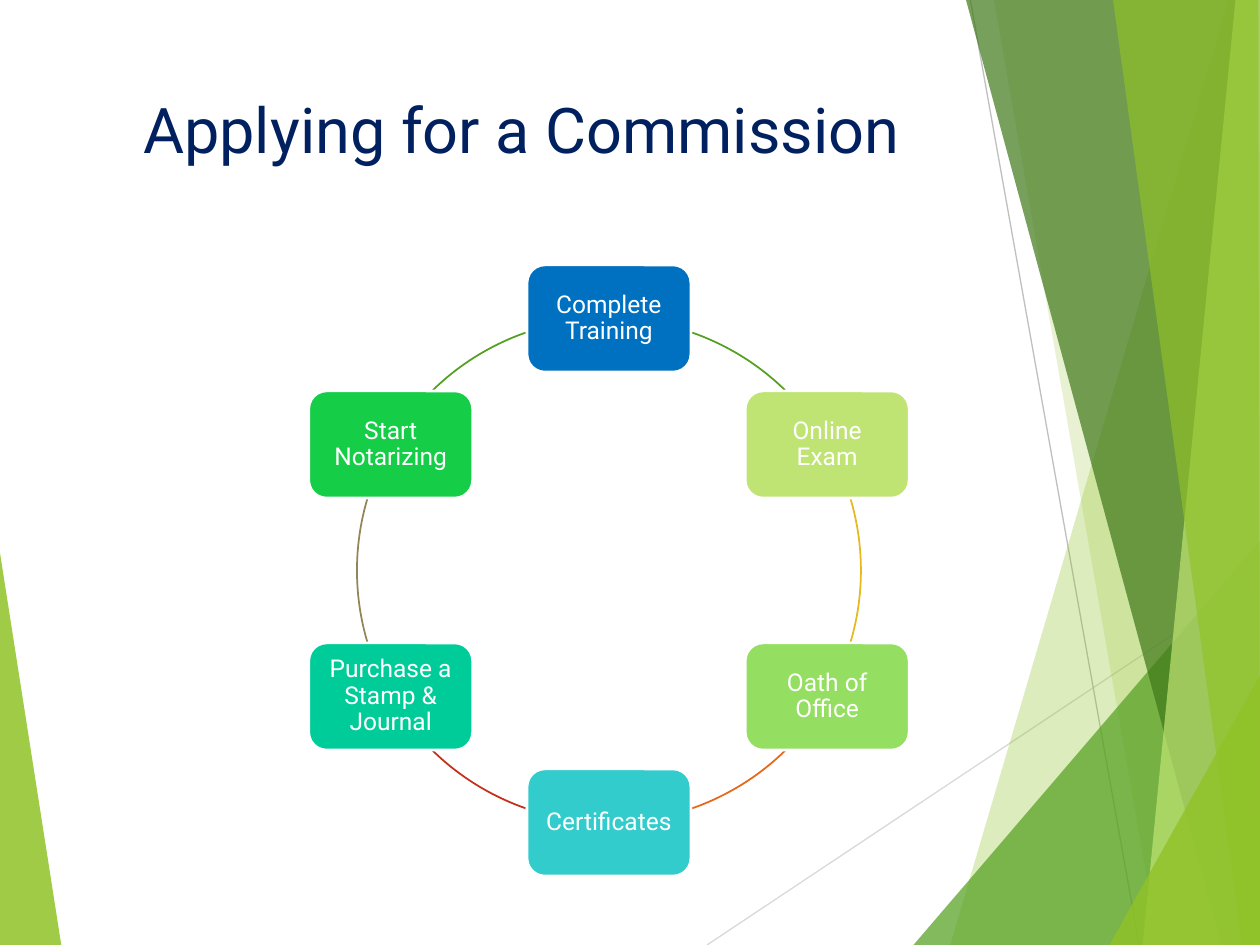
from math import cos, radians, sin

from lxml.etree import SubElement
from pptx import Presentation
from pptx.dml.color import RGBColor
from pptx.enum.shapes import MSO_CONNECTOR, MSO_SHAPE
from pptx.enum.text import MSO_ANCHOR, MSO_AUTO_SIZE, PP_ALIGN
from pptx.oxml.ns import qn
from pptx.util import Pt

WIDTH, HEIGHT = 720, 540
CENTER_X, CENTER_Y, RADIUS = 348, 326, 144
BOX_WIDTH, BOX_HEIGHT = 93.6, 61.2

STEPS = [
    ("Complete Training", "0070C0"),
    ("Online Exam", "C0E474"),
    ("Oath of Office", "94DE61"),
    ("Certificates", "33CCCC"),
    ("Purchase a Stamp & Journal", "00CC99"),
    ("Start Notarizing", "15CD46"),
]

# Start and end angle, clockwise from three o'clock, and colour
ARCS = [
    (289.3, 314.5, "54A021"),
    (343.5, 16.5, "E6B91E"),
    (45.5, 70.7, "E76618"),
    (109.3, 134.5, "C42F1A"),
    (163.5, 196.5, "918655"),
    (225.5, 250.7, "54A021"),
]

LEFT_FACET = ([(0, 316), (35.3, 540), (0, 540)], "90C226", 85)
RAYS = [
    ((404, 540), (720, 329.5), "D9D9D9"),
    ((554.5, 0), (651, 540), "BFBFBF"),
]
# Corner points, colour and opacity in percent, from back to front
RIGHT_FACETS = [
    ([(702, 0), (543, 540), (720, 540), (720, 0)], "90C226", 30),
    ([(567.5, 0), (661.5, 540), (720, 540), (720, 0)], "90C226", 20),
    ([(522.5, 540), (720, 309), (720, 540)], "54A021", 72),
    ([(552, 0), (698, 540), (720, 540), (720, 0)], "3F7819", 70),
    ([(706.5, 0), (653, 540), (720, 540), (720, 0)], "C0E474", 70),
    ([(636, 0), (710, 540), (720, 540), (718.8, 0)], "90C226", 65),
    ([(634.5, 540), (720, 385.5), (720, 540)], "90C226", 80),
]


def color(hex_string):
    return RGBColor.from_string(hex_string)


class SlideBuilder:
    font = "Roboto"

    def __init__(self, page):
        self.page = page
        self.shapes = page.shapes

    def style_text(self, frame, text, size, text_color):
        frame.text = text
        frame.word_wrap = True
        frame.auto_size = MSO_AUTO_SIZE.NONE
        para = frame.paragraphs[0]
        para.alignment = PP_ALIGN.CENTER
        para.font.name = self.font
        para.font.size = Pt(size)
        para.font.color.rgb = color(text_color)
        return para

    def title(self, text, left, top, width, height):
        title = self.shapes.title
        title.left, title.top = Pt(left), Pt(top)
        title.width, title.height = Pt(width), Pt(height)
        self.style_text(title.text_frame, text, 36, "002060")
        title.text_frame.vertical_anchor = MSO_ANCHOR.TOP

    def facet(self, points, fill, opacity):
        """Draw a translucent polygon."""
        builder = self.shapes.build_freeform(*points[0], scale=Pt(1))
        builder.add_line_segments(points[1:], close=True)
        facet = builder.convert_to_shape()
        facet.shadow.inherit = False
        facet.fill.solid()
        facet.fill.fore_color.rgb = color(fill)
        facet.line.fill.background()
        fill_color = facet.fill._xPr.find(qn("a:solidFill"))[0]
        SubElement(fill_color, qn("a:alpha")).set("val", str(opacity * 1000))

    def line(self, start, end, line_color):
        line = self.shapes.add_connector(
            MSO_CONNECTOR.STRAIGHT, *map(Pt, start + end))
        line.line.color.rgb = color(line_color)
        line.line.width = Pt(0.75)
        SubElement(line._element.spPr, qn("a:effectLst"))

    def arc(self, start, end, line_color):
        """Draw part of the cycle's circle between two angles in degrees."""
        arc = self.shapes.add_shape(
            MSO_SHAPE.ARC, Pt(CENTER_X - RADIUS), Pt(CENTER_Y - RADIUS),
            Pt(2 * RADIUS), Pt(2 * RADIUS))
        arc.shadow.inherit = False
        # Angles are stored in 1/60000 degree, adjustments scale by 100000
        arc.adjustments[0] = start * 0.6
        arc.adjustments[1] = end * 0.6
        arc.fill.background()
        arc.line.color.rgb = color(line_color)
        arc.line.width = Pt(1)

    def step(self, text, fill, angle):
        """Place a step box on the circle at an angle in degrees."""
        x = CENTER_X + RADIUS * cos(radians(angle))
        y = CENTER_Y + RADIUS * sin(radians(angle))
        box = self.shapes.add_shape(
            MSO_SHAPE.ROUNDED_RECTANGLE,
            Pt(x - BOX_WIDTH / 2), Pt(y - BOX_HEIGHT / 2),
            Pt(BOX_WIDTH), Pt(BOX_HEIGHT))
        box.shadow.inherit = False
        box.fill.solid()
        box.fill.fore_color.rgb = color(fill)
        box.line.color.rgb = color("FFFFFF")
        box.line.width = Pt(1.5)
        frame = box.text_frame
        frame.margin_left = frame.margin_right = Pt(7)
        frame.margin_top = frame.margin_bottom = Pt(7)
        frame.vertical_anchor = MSO_ANCHOR.MIDDLE
        para = self.style_text(frame, text, 14, "FFFFFF")
        para.line_spacing = 0.9


def main():
    deck = Presentation()
    deck.slide_width, deck.slide_height = Pt(WIDTH), Pt(HEIGHT)
    builder = SlideBuilder(deck.slides.add_slide(deck.slide_layouts[5]))

    builder.facet(*LEFT_FACET)
    for ray in RAYS:
        builder.line(*ray)
    for facet in RIGHT_FACETS:
        builder.facet(*facet)

    builder.title("Applying for a Commission", 48, 48, 500, 104)
    for arc in ARCS:
        builder.arc(*arc)
    for index, (text, fill) in enumerate(STEPS):
        builder.step(text, fill, index * 360 / len(STEPS) - 90)

    deck.save("out.pptx")


if __name__ == "__main__":
    main()
